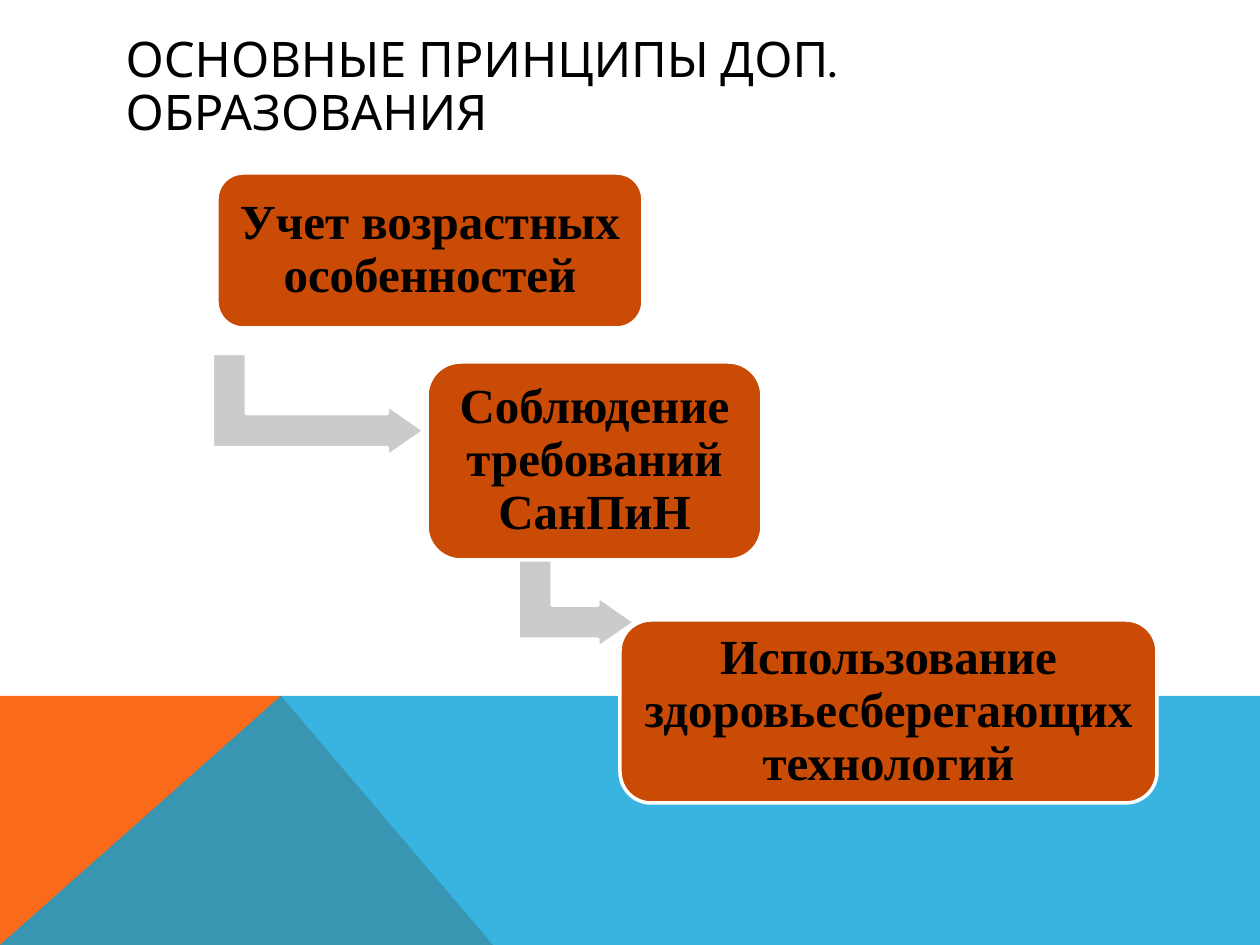
from dataclasses import dataclass

from pptx import Presentation
from pptx.dml.color import RGBColor
from pptx.enum.shapes import MSO_SHAPE
from pptx.enum.text import MSO_ANCHOR, PP_ALIGN
from pptx.oxml.ns import qn
from pptx.util import Pt
from lxml.etree import SubElement

EMU_PER_PX = 914400 / 126


@dataclass(frozen=True)
class Theme:
    """Colours, fonts and type sizes of the slide."""
    orange: str = "F96A1B"
    blue: str = "08A1D9"
    step: str = "CA4B05"
    arrow: str = "CBCBCC"
    outline: str = "FFFFFF"
    ink: str = "000000"
    title_font: str = "Karla"
    step_font: str = "Times New Roman"
    size: int = 28


THEME = Theme()
TITLE = "ОСНОВНЫЕ ПРИНЦИПЫ ДОП. ОБРАЗОВАНИЯ"
BANDS = [
    ([(0, 945), (0, 696), (281, 696), (493, 945)], THEME.orange, 100),
    ([(0, 945), (281, 696), (1260, 696), (1260, 945)], THEME.blue, 80),
]
ARROWS = [(267, 299, 103, 212), (525, 538, 103, 117)]
STEPS = [
    ("Учет возрастных особенностей", (217, 173, 426, 155)),
    ("Соблюдение требований СанПиН", (427, 362, 335, 198)),
    ("Использование здоровьесберегающих технологий", (620, 620, 537, 183)),
]


def px(length):
    """Turn pixels into EMU."""
    return round(length * EMU_PER_PX)


def paint(shape, color):
    """Give a shape a flat fill and no shadow."""
    shape.shadow.inherit = False
    shape.fill.solid()
    shape.fill.fore_color.rgb = RGBColor.from_string(color)


def write(frame, text, font, bold, align):
    """Write one paragraph into a vertically centred text frame."""
    frame.word_wrap = True
    frame.vertical_anchor = MSO_ANCHOR.MIDDLE
    para = frame.paragraphs[0]
    para.alignment = align
    para.line_spacing = 0.9
    para.space_before = Pt(0)
    span = para.add_run()
    span.text = text
    span.font.name = font
    span.font.size = Pt(THEME.size)
    span.font.bold = bold
    span.font.color.rgb = RGBColor.from_string(THEME.ink)


def add_title(page):
    """Place and fill the title placeholder."""
    box = page.shapes.title
    box.left, box.top, box.width, box.height = map(px, (113, 50, 1036, 76))
    write(box.text_frame, TITLE, THEME.title_font, False, PP_ALIGN.LEFT)


def add_band(page, points, color, opacity):
    """Draw one polygon of the footer decoration."""
    builder = page.shapes.build_freeform(*points[0], scale=EMU_PER_PX)
    builder.add_line_segments(points[1:], close=True)
    band = builder.convert_to_shape()
    paint(band, color)
    band.line.fill.background()
    if opacity < 100:
        tint = band.fill._xPr.find(qn("a:solidFill"))[0]
        SubElement(tint, qn("a:alpha")).set("val", str(opacity * 1000))


def add_block(page, kind, frame, color, adjustments):
    """Draw a filled preset shape with the white outline."""
    block = page.shapes.add_shape(kind, *map(px, frame))
    for index, value in enumerate(adjustments):
        block.adjustments[index] = value
    paint(block, color)
    block.line.color.rgb = RGBColor.from_string(THEME.outline)
    block.line.width = Pt(2)
    return block


def add_arrow(page, frame):
    """Draw a bent arrow that leads down and to the right."""
    arrow = add_block(page, MSO_SHAPE.BENT_UP_ARROW, frame, THEME.arrow,
                      (0.33, 0.25, 0.36))
    arrow.rotation = 90


def add_step(page, text, frame):
    """Draw a rounded box that holds one principle."""
    box = add_block(page, MSO_SHAPE.ROUNDED_RECTANGLE, frame, THEME.step, (0.17,))
    inner = box.text_frame
    inner.margin_left = inner.margin_right = px(14)
    inner.margin_top = inner.margin_bottom = px(14)
    write(inner, text, THEME.step_font, True, PP_ALIGN.CENTER)


def main():
    """Build the slide and save it."""
    deck = Presentation()
    deck.slide_width, deck.slide_height = px(1260), px(945)
    page = deck.slides.add_slide(deck.slide_layouts[5])
    for points, color, opacity in BANDS:
        add_band(page, points, color, opacity)
    add_title(page)
    for frame in ARROWS:
        add_arrow(page, frame)
    for text, frame in STEPS:
        add_step(page, text, frame)
    deck.save("out.pptx")


if __name__ == "__main__":
    main()
